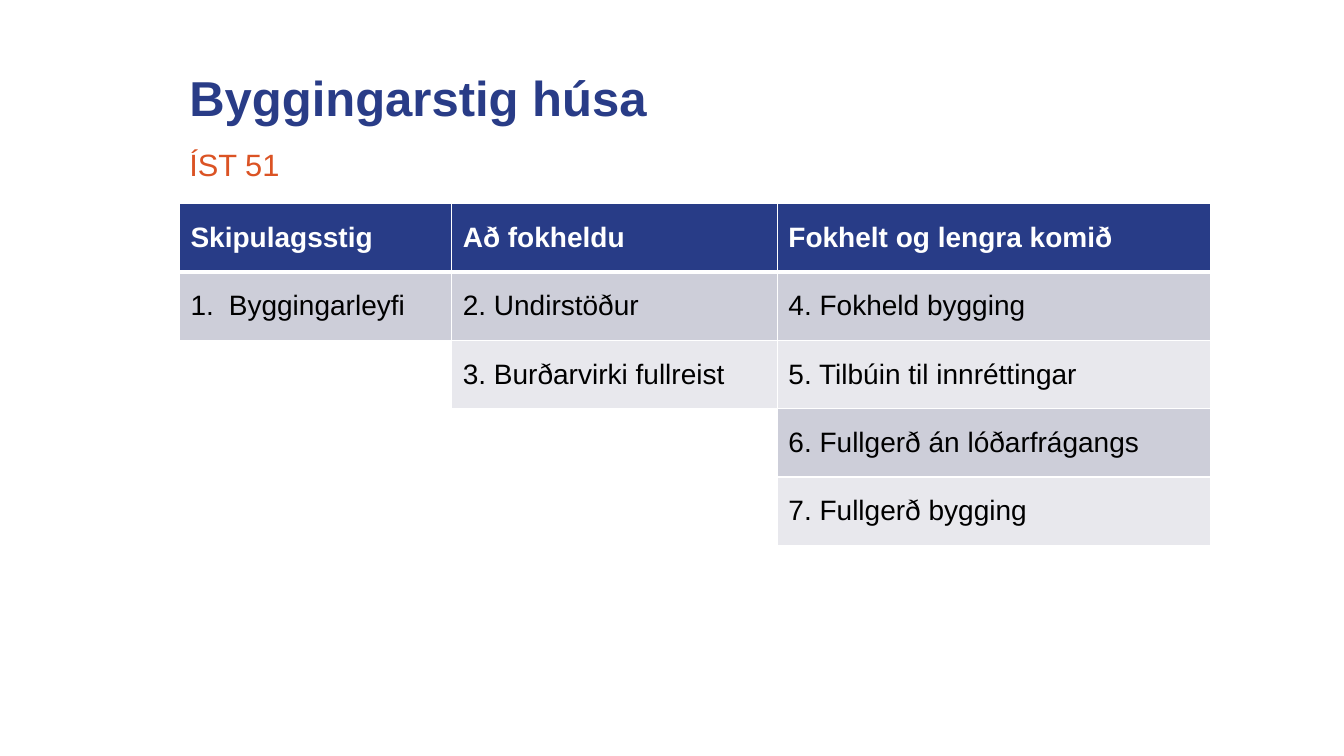
import pptx
import pptx.util
import pptx.dml.color
import pptx.enum.text
import pptx.oxml
import pptx.oxml.ns
import lxml.etree

Inches = pptx.util.Inches
ANCHOR = pptx.enum.text.MSO_ANCHOR
COLORS = {"title": "293C87", "accent": "DB5324", "head": "283C87", "dark": "CDCED9",
          "light": "E8E8ED", "white": "FFFFFF", "black": "000000"}
COLS = (2.7, 3.23, 4.3)
ROWS = (
    ("Skipulagsstig", "Að fokheldu", "Fokhelt og lengra komið"),
    ("Byggingarleyfi", "2. Undirstöður", "4. Fokheld bygging"),
    ("", "3. Burðarvirki fullreist", "5. Tilbúin til innréttingar"),
    ("", "", "6. Fullgerð án lóðarfrágangs"),
    ("", "", "7. Fullgerð bygging"),
)


def color(name):
    """Return the named colour."""
    return pptx.dml.color.RGBColor.from_string(COLORS[name])


def style(para, size, name, bold=False):
    """Set the font of a whole paragraph."""
    font = para.font
    font.name = "Arial"
    font.size = pptx.util.Pt(size)
    font.bold = bold
    font.color.rgb = color(name)


def label(slide, box, text, size, name, bold, anchor):
    """Place one line of heading text in the box."""
    frame = slide.shapes.add_textbox(*map(Inches, box)).text_frame
    frame.word_wrap = True
    frame.vertical_anchor = anchor
    para = frame.paragraphs[0]
    para.text = text
    para.line_spacing = 0.9
    style(para, size, name, bold)


def border(cell, base):
    """Draw white cell borders, with the given width at the bottom."""
    props = cell._tc.get_or_add_tcPr()
    qn = pptx.oxml.ns.qn
    for side, width in (("L", 1), ("R", 1), ("T", 1), ("B", base)):
        line = lxml.etree.SubElement(props, qn("a:ln" + side), w=str(pptx.util.Pt(width)))
        fill = lxml.etree.SubElement(line, qn("a:solidFill"))
        lxml.etree.SubElement(fill, qn("a:srgbClr"), val=COLORS["white"])


def number(para):
    """Give the paragraph an automatic number with a hanging indent."""
    props = para._p.get_or_add_pPr()
    props.set("marL", str(Inches(0.38)))
    props.set("indent", str(Inches(-0.38)))
    lxml.etree.SubElement(props, pptx.oxml.ns.qn("a:buAutoNum"), type="arabicPeriod")


def stages(slide, box):
    """Build the table of building stages in the box."""
    table = slide.shapes.add_table(len(ROWS), len(COLS), *map(Inches, box)).table
    for col, width in zip(table.columns, COLS):
        col.width = Inches(width)
    for r, row in enumerate(ROWS):
        table.rows[r].height = Inches(box[3] / len(ROWS))
        shade = "head" if r == 0 else "dark" if r % 2 else "light"
        for c, text in enumerate(row):
            cell = table.cell(r, c)
            border(cell, 1 if r else 3)
            if not text:
                cell.fill.background()
                continue
            cell.fill.solid()
            cell.fill.fore_color.rgb = color(shade)
            cell.vertical_anchor = ANCHOR.MIDDLE
            cell.margin_left = cell.margin_right = Inches(0.11)
            para = cell.text_frame.paragraphs[0]
            para.text = text
            if (r, c) == (1, 0):
                number(para)
            style(para, 20, "black" if r else "white", r == 0)


def main():
    """Build and save the slide."""
    deck = pptx.Presentation()
    deck.slide_width, deck.slide_height = Inches(13.33), Inches(7.5)
    slide = deck.slides.add_slide(deck.slide_layouts[6])
    label(slide, (1.78, 0.6, 10.24, 0.71), "Byggingarstig húsa", 35, "title", True, ANCHOR.BOTTOM)
    stages(slide, (1.78, 2.02, sum(COLS), 3.39))
    label(slide, (1.78, 1.44, 10.24, 0.39), "ÍST 51", 22, "accent", False, ANCHOR.TOP)
    deck.save("out.pptx")


if __name__ == "__main__":
    main()
